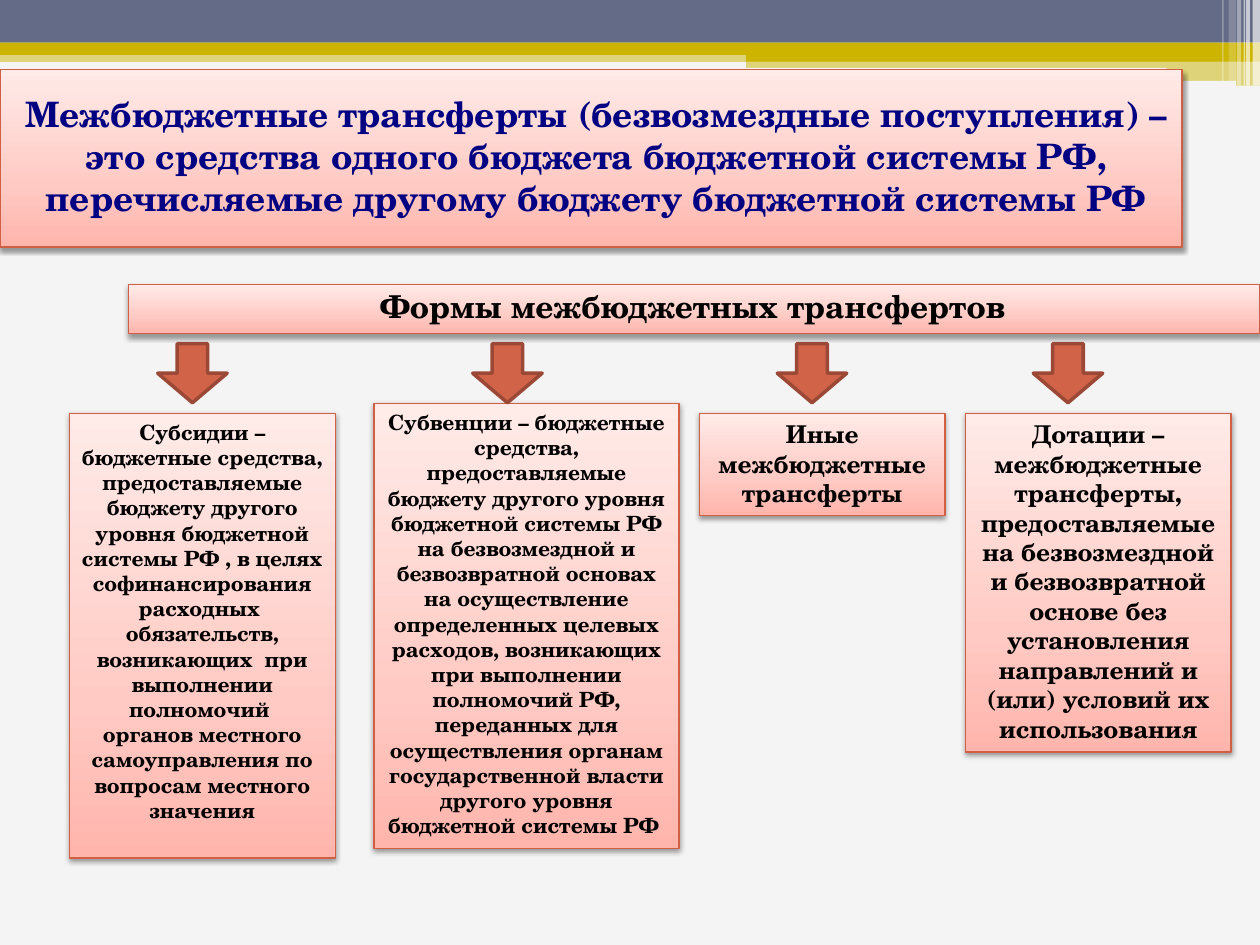
from copy import deepcopy

from lxml import etree
from pptx import Presentation
from pptx.dml.color import RGBColor
from pptx.enum.shapes import MSO_SHAPE
from pptx.enum.text import MSO_ANCHOR, MSO_AUTO_SIZE, PP_ALIGN
from pptx.oxml.ns import qn
from pptx.util import Cm, Pt

RECTANGLE = MSO_SHAPE.RECTANGLE
ROUNDED = MSO_SHAPE.ROUNDED_RECTANGLE
DOWN_ARROW = MSO_SHAPE.DOWN_ARROW
CENTER = PP_ALIGN.CENTER
TOP, MIDDLE = MSO_ANCHOR.TOP, MSO_ANCHOR.MIDDLE
FIT_SHAPE, FIXED = MSO_AUTO_SIZE.SHAPE_TO_FIT_TEXT, MSO_AUTO_SIZE.NONE

COLORS = {
    "paper": "F4F4F4", "white": "FFFFFF", "slate": "646B86", "gold": "CCB400",
    "navy": "000082", "black": "000000", "border": "D05F44",
    "arrow": "D16349", "arrow_edge": "9B4936",
}
PANEL_GRADIENT = [(0, "FFB5AC"), (0.35, "FFCAC4"), (1, "FFEBE8")]
FONT = "TeX Gyre Schola"

BANDS = [
    (RECTANGLE, (0, 1.02, 25.4, 0.23), "gold", 50),
    (RECTANGLE, (0, 0, 25.4, 0.86), "slate", 100),
    (RECTANGLE, (0, 0.86, 25.4, 0.25), "gold", 100),
    (RECTANGLE, (15.04, 0.99, 10.36, 0.25), "gold", 100),
    (RECTANGLE, (15.04, 1.22, 10.36, 0.51), "gold", 50),
    (ROUNDED, (15.01, 1.37, 8.51, 0.08), "paper", 100),
    (ROUNDED, (20.47, 1.63, 4.45, 0.1), "paper", 100),
]
STRIPES = [
    (25.25, 0.15, 1.73, 65), (25.12, 0.08, 1.73, 65), (25.07, 0.03, 1.73, 60),
    (24.94, 0.08, 1.73, 40), (24.77, 0.15, 1.63, 20), (24.64, 0.03, 1.63, 30),
]
TITLE = (
    "Межбюджетные трансферты (безвозмездные поступления) – это средства одного "
    "бюджета бюджетной системы РФ, перечисляемые другому бюджету бюджетной системы РФ"
)
CARDS = [
    ((1.4, 8.33, 5.36, 8.97), 12,
     "Субсидии – бюджетные средства, предоставляемые бюджету другого уровня "
     "бюджетной системы РФ , в целях софинансирования расходных  обязательств, "
     "возникающих  при выполнении полномочий  органов местного самоуправления "
     "по вопросам местного значения"),
    ((7.54, 8.13, 6.15, 8.97), 12,
     "Субвенции – бюджетные средства, предоставляемые бюджету другого уровня "
     "бюджетной системы РФ на безвозмездной и безвозвратной основах на "
     "осуществление определенных целевых расходов, возникающих при выполнении "
     "полномочий РФ, переданных для осуществления органам государственной "
     "власти другого уровня бюджетной системы РФ "),
    ((14.1, 8.33, 4.95, 2.06), 14, "Иные межбюджетные трансферты"),
    ((19.46, 8.33, 5.36, 6.83), 14,
     "Дотации – межбюджетные трансферты, предоставляемые на безвозмездной и "
     "безвозвратной основе без установления направлений и (или) условий их "
     "использования"),
]
ARROW_LEFTS = [3.18, 9.53, 15.67, 20.83]


def set_all(target, values):
    for name, value in values.items():
        setattr(target, name, value)


class SlideBuilder:
    def __init__(self, slide, font):
        self.slide = slide
        self.font = font

    def background(self, color):
        fill = self.slide.background.fill
        fill.solid()
        fill.fore_color.rgb = RGBColor.from_string(COLORS[color])

    def outline(self, shape, color, width):
        shape.line.color.rgb = RGBColor.from_string(COLORS[color])
        shape.line.width = Pt(width)

    def block(self, kind, bounds, color, opacity=100):
        shape = self.slide.shapes.add_shape(kind, *map(Cm, bounds))
        shape.shadow.inherit = False
        shape.line.fill.background()
        shape.fill.solid()
        shape.fill.fore_color.rgb = RGBColor.from_string(COLORS[color])
        if opacity < 100:
            tint = shape.fill._xPr.find(".//" + qn("a:srgbClr"))
            etree.SubElement(tint, qn("a:alpha"), val=str(opacity * 1000))
        return shape

    def arrow(self, left):
        shape = self.block(DOWN_ARROW, (left, 6.93, 1.4, 1.19), "arrow")
        shape.adjustments[0] = 0.44
        self.outline(shape, "arrow_edge", 2)

    def gradient(self, shape):
        shape.fill.gradient()
        shape.fill.gradient_angle = 90
        stop_list = shape._element.spPr.find(".//" + qn("a:gsLst"))
        stop_list.append(deepcopy(stop_list[0]))
        for stop, (position, color) in zip(shape.fill.gradient_stops, PANEL_GRADIENT):
            stop.position = position
            stop.color.rgb = RGBColor.from_string(color)

    def drop_shadow(self, shape):
        effects = shape._element.spPr.find(qn("a:effectLst"))
        shadow = etree.SubElement(
            effects, qn("a:outerShdw"), blurRad=str(Pt(3.1)), dist=str(Pt(1.6)),
            dir="5400000", rotWithShape="0")
        tint = etree.SubElement(shadow, qn("a:srgbClr"), val=COLORS["black"])
        etree.SubElement(tint, qn("a:alpha"), val="38000")

    def panel(self, bounds, text, size, color="black", frame=None, paragraph=None):
        box = self.block(RECTANGLE, bounds, "white")
        self.gradient(box)
        self.outline(box, "border", 0.75)
        self.drop_shadow(box)
        set_all(box.text_frame, {
            "word_wrap": True, "vertical_anchor": TOP, "auto_size": FIT_SHAPE,
            **(frame or {})})
        para = box.text_frame.paragraphs[0]
        set_all(para, {"alignment": CENTER, **(paragraph or {})})
        span = para.add_run()
        span.text = text
        set_all(span.font, {"name": self.font, "size": Pt(size), "bold": True})
        span.font.color.rgb = RGBColor.from_string(COLORS[color])


def main():
    deck = Presentation()
    set_all(deck, {"slide_width": Cm(25.4), "slide_height": Cm(19.05)})
    page = SlideBuilder(deck.slides.add_slide(deck.slide_layouts[6]), FONT)
    page.background("paper")
    for band in BANDS:
        page.block(*band)
    for left, width, height, opacity in STRIPES:
        page.block(RECTANGLE, (left, 0, width, height), "white", opacity)

    page.panel((0, 1.4, 23.83, 3.58), TITLE, 20, "navy", {
        "auto_size": FIXED, "vertical_anchor": MIDDLE,
        "margin_top": 0, "margin_right": Cm(0.05)})
    page.panel(
        (2.59, 5.74, 22.81, 0.99), "Формы межбюджетных трансфертов", 18,
        frame={"auto_size": FIXED, "margin_left": 0, "margin_right": Cm(0.05)},
        paragraph={"line_spacing": 0.9, "space_before": Pt(3)})
    for bounds, size, text in CARDS:
        page.panel(bounds, text, size)
    for left in ARROW_LEFTS:
        page.arrow(left)
    deck.save("out.pptx")


if __name__ == "__main__":
    main()
